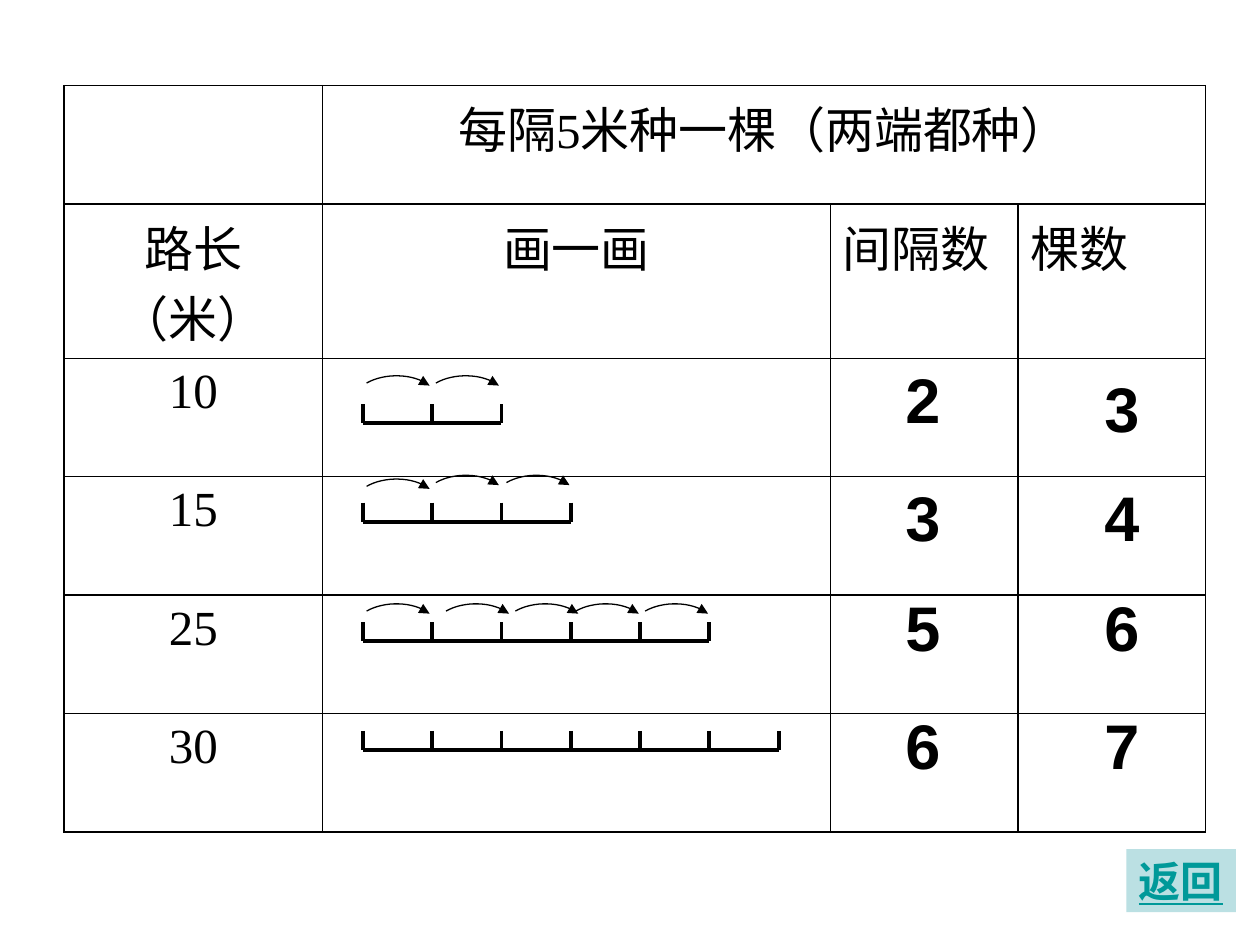
from lxml.etree import SubElement
from pptx import Presentation
from pptx.dml.color import RGBColor
from pptx.enum.shapes import MSO_CONNECTOR as Connector, MSO_SHAPE as Shape
from pptx.enum.text import MSO_ANCHOR as Anchor, PP_ALIGN as Align
from pptx.oxml.ns import qn
from pptx.util import Inches, Pt

BLACK = RGBColor(0x00, 0x00, 0x00)
WHITE = RGBColor(0xFF, 0xFF, 0xFF)
PALE_TEAL = RGBColor(0xBB, 0xE0, 0xE3)
TEAL = RGBColor(0x00, 0x99, 0x99)

COLUMN_WIDTHS = [2.05, 4.03, 1.49, 1.49]
ROW_HEIGHTS = [0.94, 0.82, 0.94, 0.94, 0.94, 0.94]
TABLE_ROWS = [
    ["", "每隔5米种一棵（两端都种）", "", ""],
    ["路长（米）", "画一画", "间隔数", "棵数"],
    *[[length, "", "", ""] for length in ("10", "15", "25", "30")],
]
RULER_LEFT, INTERVAL, TICK = 2.88, 0.55, 0.15
RULERS = [(2, 3.36), (3, 4.14), (5, 5.09), (6, 5.95)]
ARROWS = [
    (2.91, 3.04), (3.46, 3.04),
    (2.91, 3.86), (3.46, 3.83), (4.02, 3.83),
    (2.91, 4.85), (3.54, 4.85), (4.09, 4.85), (4.57, 4.85), (5.12, 4.85),
]
ARROW_CURVE = [(0, 0), (0.14, -0.08), (0.37, -0.08), (0.5, 0.02)]
CURVE_STEPS = 16
ANSWERS = [
    (6.89, [(2.81, "2"), (3.75, "3"), (4.62, "5"), (5.56, "6")]),
    (8.47, [(2.88, "3"), (3.75, "4"), (4.62, "6"), (5.56, "7")]),
]


def style_paragraph(para, font_name, size, color, bold=False, align=Align.CENTER):
    """Align a paragraph and format its runs."""
    para.alignment = align
    for span in para.runs:
        span.font.name = font_name
        span.font.size = Pt(size)
        span.font.bold = bold
        span.font.color.rgb = color


def border_cell(cell):
    """Draw a thin black line on all four sides of a cell."""
    properties = cell._tc.get_or_add_tcPr()
    for side in ("a:lnL", "a:lnR", "a:lnT", "a:lnB"):
        line = SubElement(properties, qn(side), w=str(Pt(1)))
        fill = SubElement(line, qn("a:solidFill"))
        SubElement(fill, qn("a:srgbClr"), val=str(BLACK))


def add_planting_table(page):
    """Add the table of road lengths, intervals and trees."""
    frame = page.shapes.add_table(
        len(ROW_HEIGHTS), len(COLUMN_WIDTHS), Inches(0.51), Inches(0.68),
        Inches(sum(COLUMN_WIDTHS)), Inches(sum(ROW_HEIGHTS)))
    table = frame.table
    table.first_row = table.horz_banding = False
    for column, width in zip(table.columns, COLUMN_WIDTHS):
        column.width = Inches(width)
    for row, height, texts in zip(table.rows, ROW_HEIGHTS, TABLE_ROWS):
        row.height = Inches(height)
        for index, (cell, text) in enumerate(zip(row.cells, texts)):
            border_cell(cell)
            cell.fill.solid()
            cell.fill.fore_color.rgb = WHITE
            cell.text_frame.text = text
            align = Align.CENTER if index < 2 else Align.LEFT
            style_paragraph(cell.text_frame.paragraphs[0], "Times New Roman", 28, BLACK,
                            align=align)
    table.cell(0, 1).merge(table.cell(0, 3))


def add_line(page, start, end):
    """Add a straight black line between two points in inches."""
    line = page.shapes.add_connector(
        Connector.STRAIGHT, *[Inches(value) for value in (*start, *end)])
    line.line.color.rgb = BLACK
    line.line.width = Pt(2.25)
    SubElement(line._element.spPr, qn("a:effectLst"))


def add_ruler(page, intervals, base):
    """Add a road with a tick at every tree."""
    add_line(page, (RULER_LEFT, base), (RULER_LEFT + intervals * INTERVAL, base))
    for index in range(intervals + 1):
        x = RULER_LEFT + index * INTERVAL
        add_line(page, (x, base - TICK), (x, base))


def curve_point(t):
    """Return the point of the cubic arrow curve at t."""
    weights = ((1 - t) ** 3, 3 * t * (1 - t) ** 2, 3 * t ** 2 * (1 - t), t ** 3)
    return [sum(weight * value for weight, value in zip(weights, values))
            for values in zip(*ARROW_CURVE)]


def add_curved_arrow(page, left, top):
    """Add a shallow arc that ends in an arrowhead."""
    curve = [curve_point(step / CURVE_STEPS) for step in range(CURVE_STEPS + 1)]
    points = [(Inches(left + x), Inches(top + y)) for x, y in curve]
    builder = page.shapes.build_freeform(*points[0])
    builder.add_line_segments(points[1:], close=False)
    arrow = builder.convert_to_shape()
    arrow.shadow.inherit = False
    arrow.fill.background()
    arrow.line.color.rgb = BLACK
    arrow.line.width = Pt(0.75)
    SubElement(arrow.line._get_or_add_ln(), qn("a:tailEnd"), type="triangle")


def add_answer(page, left, top, text):
    """Add a bold number over a table cell."""
    box = page.shapes.add_textbox(Inches(left), Inches(top), Inches(0.87), Inches(0.7))
    box.text_frame.word_wrap = True
    box.text_frame.text = text
    style_paragraph(box.text_frame.paragraphs[0], "Arial", 36, BLACK, bold=True)


def add_return_button(page):
    """Add the underlined return button in the corner."""
    button = page.shapes.add_shape(
        Shape.RECTANGLE, Inches(8.94), Inches(6.74), Inches(0.87), Inches(0.5))
    button.shadow.inherit = False
    button.fill.solid()
    button.fill.fore_color.rgb = PALE_TEAL
    button.line.fill.background()
    frame = button.text_frame
    frame.word_wrap = False
    frame.vertical_anchor = Anchor.MIDDLE
    frame.text = "返回"
    para = frame.paragraphs[0]
    style_paragraph(para, "Arial", 24, TEAL, bold=True, align=Align.LEFT)
    para.runs[0].font.underline = True


def main():
    """Build the slide and save it."""
    deck = Presentation()
    deck.slide_width, deck.slide_height = Inches(10), Inches(7.5)
    page = deck.slides.add_slide(deck.slide_layouts[6])
    add_planting_table(page)
    for intervals, base in RULERS:
        add_ruler(page, intervals, base)
    for left, top in ARROWS:
        add_curved_arrow(page, left, top)
    for left, answers in ANSWERS:
        for top, text in answers:
            add_answer(page, left, top, text)
    add_return_button(page)
    deck.save("out.pptx")


if __name__ == "__main__":
    main()
